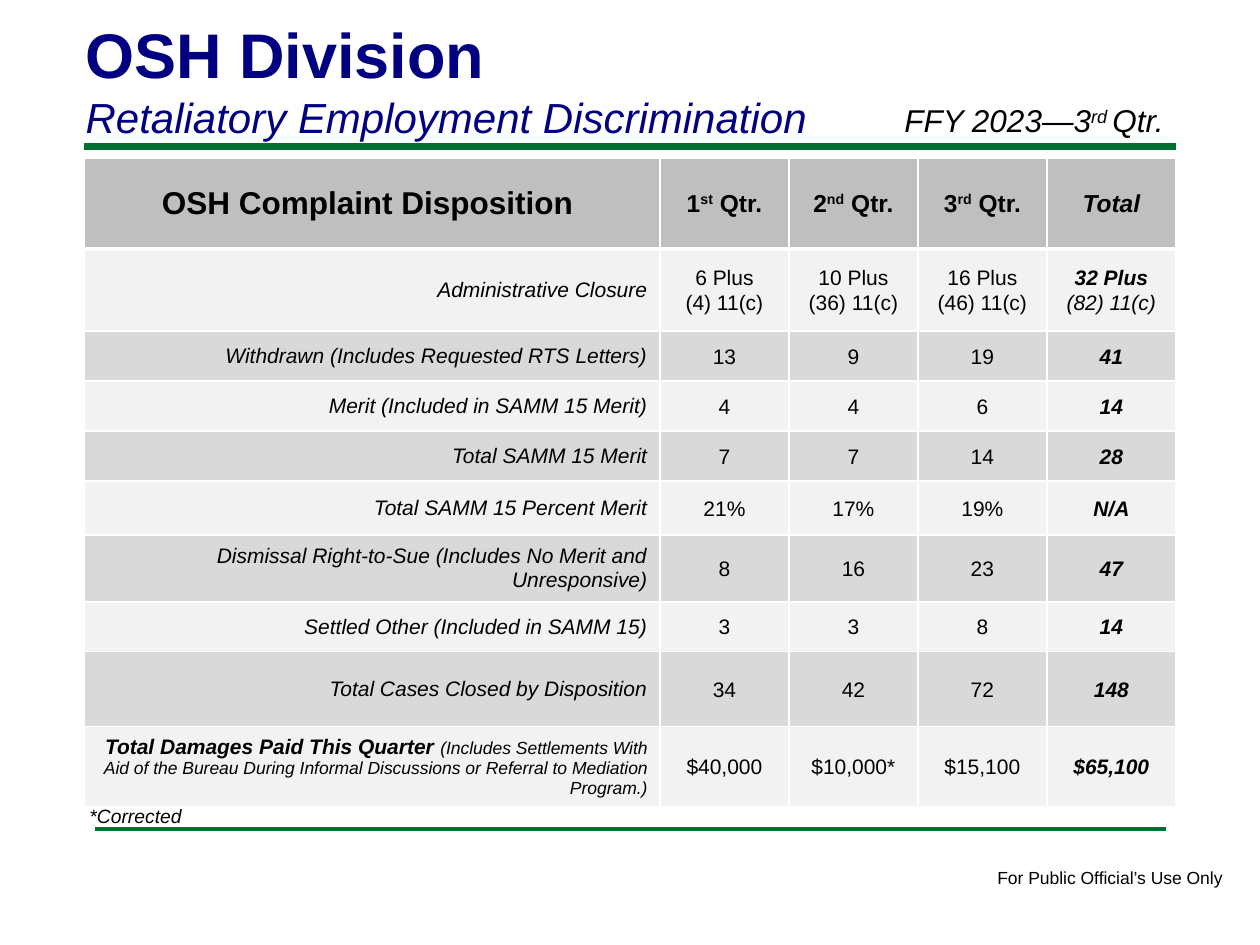
from dataclasses import dataclass
from typing import Any, NamedTuple

import lxml.etree
import pptx
import pptx.dml.color
import pptx.enum.shapes
import pptx.enum.text
import pptx.oxml.ns
import pptx.util

PX = 914400 / 126
FONT = "Arial"
COLORS = {"navy": "000080", "green": "007030", "black": "000000", "white": "FFFFFF",
          "header": "BFBFBF", "light": "F2F2F2", "dark": "D9D9D9"}
ALIGN = pptx.enum.text.PP_ALIGN
ANCHOR = pptx.enum.text.MSO_ANCHOR


class Run(NamedTuple):
    text: str
    size: int = 12
    bold: bool = False
    italic: bool = False
    raised: bool = False
    color: str = "black"


class Box(NamedTuple):
    left: int
    top: int
    width: int
    height: int


@dataclass
class Label:
    box: Box
    runs: list[Run]
    wrap: bool


@dataclass
class Rule:
    left: int
    right: int
    y: int
    points: int


@dataclass
class Disposition:
    height: int
    label: list[Run]
    quarters: list[str]
    total: list[Run]


def px(value: int) -> int:
    return round(value * PX)


def rgb(name: str) -> pptx.dml.color.RGBColor:
    return pptx.dml.color.RGBColor.from_string(COLORS[name])


def set_attributes(target: Any, values: dict) -> None:
    for name, value in values.items():
        setattr(target, name, value)


def write_paragraphs(frame: Any, paragraphs: list[list[Run]], **style: Any) -> None:
    for index, runs in enumerate(paragraphs):
        paragraph = frame.add_paragraph() if index else frame.paragraphs[0]
        set_attributes(paragraph, style)
        for part in runs:
            run = paragraph.add_run()
            run.text = part.text
            set_attributes(run.font, {"name": FONT, "size": pptx.util.Pt(part.size),
                                      "bold": part.bold, "italic": part.italic})
            run.font.color.rgb = rgb(part.color)
            if part.raised:
                run.font._element.set("baseline", "30000")


def add_label(slide: Any, label: Label) -> None:
    shape = slide.shapes.add_textbox(*map(px, label.box))
    shape.text_frame.word_wrap = label.wrap
    write_paragraphs(shape.text_frame, [label.runs])


def add_rule(slide: Any, rule: Rule) -> None:
    connector = slide.shapes.add_connector(
        pptx.enum.shapes.MSO_CONNECTOR.STRAIGHT,
        px(rule.left), px(rule.y), px(rule.right), px(rule.y))
    connector.line.color.rgb = rgb("green")
    connector.line.width = pptx.util.Pt(rule.points)
    lxml.etree.SubElement(connector._element.spPr, pptx.oxml.ns.qn("a:effectLst"))


def format_cell(cell: Any, fill: str, top: int, bottom: int) -> None:
    cell.vertical_anchor = ANCHOR.MIDDLE
    cell.fill.solid()
    cell.fill.fore_color.rgb = rgb(fill)
    properties = cell._tc.get_or_add_tcPr()
    widths = {"lnL": 1, "lnR": 1, "lnT": top, "lnB": bottom}
    for position, (tag, points) in enumerate(widths.items()):
        line = lxml.etree.Element(pptx.oxml.ns.qn(f"a:{tag}"), w=str(pptx.util.Pt(points)))
        solid = lxml.etree.SubElement(line, pptx.oxml.ns.qn("a:solidFill"))
        lxml.etree.SubElement(solid, pptx.oxml.ns.qn("a:srgbClr"), val=COLORS["white"])
        properties.insert(position, line)


def add_dispositions(slide: Any, box: Box, header_height: int, columns: list[int],
                     headers: list[list[Run]], rows: list[Disposition]) -> None:
    frame = slide.shapes.add_table(len(rows) + 1, len(columns), *map(px, box))
    table = frame.table
    set_attributes(table, {"first_row": False, "horz_banding": False})
    for column, width in zip(table.columns, columns):
        column.width = px(width)
    for row, height in zip(table.rows, [header_height] + [item.height for item in rows]):
        row.height = px(height)

    for column, runs in enumerate(headers):
        cell = table.cell(0, column)
        format_cell(cell, "header", 1, 3)
        write_paragraphs(cell.text_frame, [runs], alignment=ALIGN.CENTER)

    for index, item in enumerate(rows, start=1):
        quarters = [[[Run(line)] for line in text.split("\n")] for text in item.quarters]
        values = quarters + [[[run] for run in item.total]]
        for column, paragraphs in enumerate([[item.label]] + values):
            cell = table.cell(index, column)
            format_cell(cell, "light" if index % 2 else "dark", 3 if index == 1 else 1, 1)
            style = {"alignment": ALIGN.RIGHT}
            if column:
                style = {"alignment": ALIGN.CENTER, "line_spacing": 1.07,
                         "space_after": pptx.util.Pt(0 if len(paragraphs) > 1 else 8)}
            write_paragraphs(cell.text_frame, paragraphs, **style)


def simple(height: int, label: str, *values: str) -> Disposition:
    return Disposition(height, [Run(label, italic=True)], list(values[:-1]),
                       [Run(values[-1], bold=True, italic=True)])


def quarter(number: str, suffix: str) -> list[Run]:
    return [Run(number, 14, True), Run(suffix, 14, True, raised=True), Run(" Qtr.", 14, True)]


HEADERS = [[Run("OSH Complaint Disposition ", 18, True)],
           quarter("1", "st"), quarter("2", "nd"), quarter("3", "rd"),
           [Run("Total", 14, True, True)]]
ROWS = [
    Disposition(82, [Run("Administrative Closure", italic=True)],
                ["6 Plus\n(4) 11(c)", "10 Plus\n(36) 11(c)", "16 Plus\n(46) 11(c)"],
                [Run("32 Plus", bold=True, italic=True), Run("(82) 11(c)", italic=True)]),
    simple(50, "Withdrawn (Includes Requested RTS Letters)", "13", "9", "19", "41"),
    simple(50, "Merit (Included in SAMM 15 Merit)", "4", "4", "6", "14"),
    simple(50, "Total SAMM 15 Merit", "7", "7", "14", "28"),
    simple(54, "Total SAMM 15 Percent Merit", "21%", "17%", "19%", "N/A"),
    simple(67, "Dismissal Right-to-Sue (Includes No Merit and Unresponsive)",
           "8", "16", "23", "47"),
    simple(50, "Settled Other (Included in SAMM 15)", "3", "3", "8", "14"),
    simple(75, "Total Cases Closed by Disposition", "34", "42", "72", "148"),
    Disposition(80, [Run("Total Damages Paid This Quarter ", bold=True, italic=True),
                     Run("(Includes Settlements With Aid of the Bureau During Informal "
                         "Discussions or Referral to Mediation Program.)", 10, italic=True)],
                ["$40,000", "$10,000*", "$15,100"],
                [Run("$65,100", bold=True, italic=True)]),
]
RULES = [Rule(84, 1176, 147, 4), Rule(95, 1166, 829, 2)]
LABELS = [
    Label(Box(985, 861, 253, 34), [Run("For Public Official’s Use Only", 10)], False),
    Label(Box(892, 95, 315, 50), [Run("FFY 2023—3", 18, italic=True),
                                  Run("rd ", 18, italic=True, raised=True),
                                  Run("Qtr.", 18, italic=True)], True),
    Label(Box(77, 798, 118, 36), [Run("*Corrected", 11, italic=True)], False),
]


def main() -> None:
    presentation = pptx.Presentation()
    set_attributes(presentation, {"slide_width": px(1260), "slide_height": px(945)})
    slide = presentation.slides.add_slide(presentation.slide_layouts[5])

    # Heading
    title = slide.shapes.title
    set_attributes(title, dict(zip(("left", "top", "width", "height"),
                                   map(px, Box(73, 8, 1040, 140)))))
    set_attributes(title.text_frame, {"word_wrap": True, "vertical_anchor": ANCHOR.BOTTOM,
                                      "auto_size": pptx.enum.text.MSO_AUTO_SIZE.NONE})
    write_paragraphs(title.text_frame, [
        [Run("OSH Division", 36, True, color="navy")],
        [Run("Retaliatory Employment Discrimination", 24, italic=True, color="navy")],
    ], alignment=ALIGN.LEFT)

    # Green rules, disposition table and small labels
    for rule in RULES:
        add_rule(slide, rule)
    add_dispositions(slide, Box(84, 158, 1092, 649), 91, [576] + [129] * 4, HEADERS, ROWS)
    for label in LABELS:
        add_label(slide, label)

    presentation.save("out.pptx")


if __name__ == "__main__":
    main()
